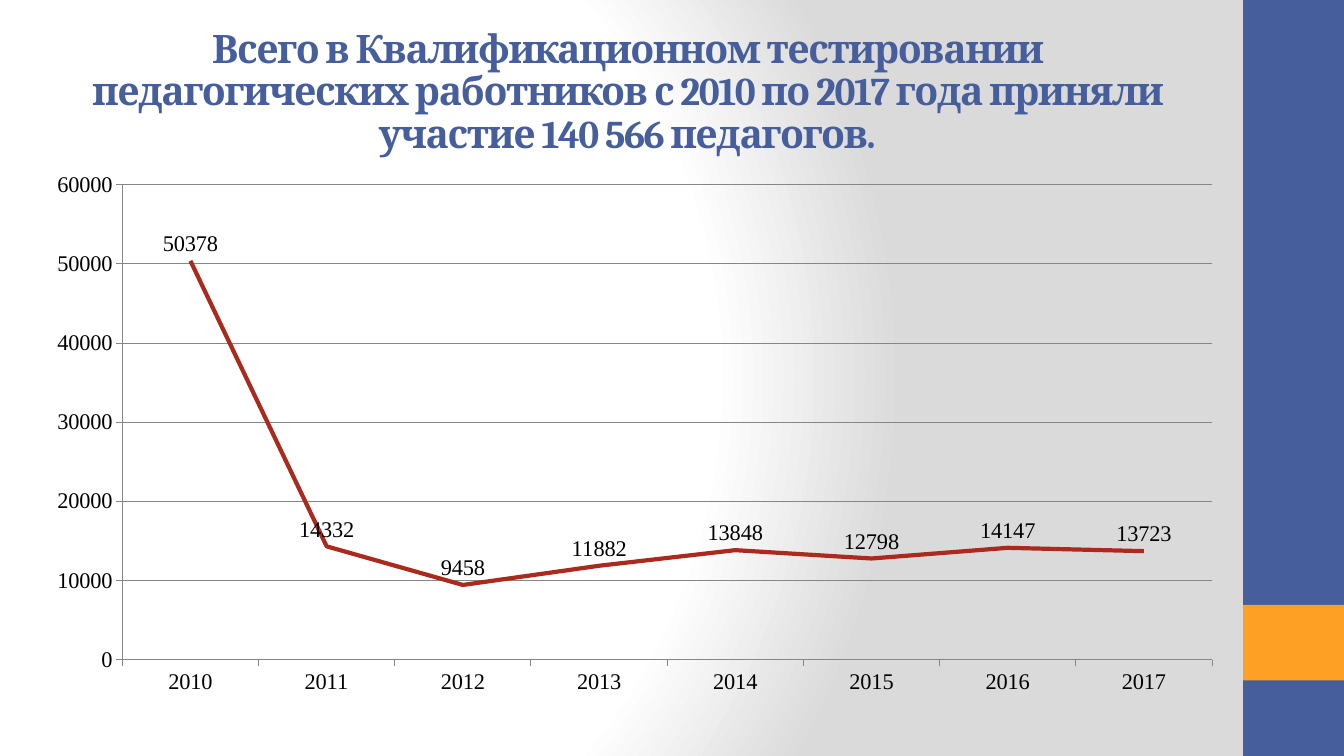
import lxml.etree
import pptx
import pptx.chart.data
import pptx.dml.color
import pptx.enum.chart
import pptx.enum.shapes
import pptx.enum.text
import pptx.oxml
import pptx.oxml.ns
import pptx.util

Cm, Pt, qn = pptx.util.Cm, pptx.util.Pt, pptx.oxml.ns.qn
BLUE, ORANGE, RED, GREY, BLACK = "465E9C", "FDA023", "AA2B1E", "868686", "000000"
WIDTH, HEIGHT, BAND = 33.87, 19.05, 2.54
TITLE = ("Всего в Квалификационном тестировании педагогических работников "
         "с 2010 по 2017 года приняли участие 140 566 педагогов.")
PARTICIPANTS = {"2010": 50378, "2011": 14332, "2012": 9458, "2013": 11882,
                "2014": 13848, "2015": 12798, "2016": 14147, "2017": 13723}


def rgb(value):
    """Turn a hex string into a colour."""
    return pptx.dml.color.RGBColor.from_string(value)


def set_background(s):
    """Fill the slide with a circular gradient from white to grey."""
    s.background.fill.gradient()
    old = s.element.find(".//" + qn("p:bgPr") + "/" + qn("a:gradFill"))
    stops = "".join(f'<a:gs pos="{pos * 1000}"><a:srgbClr val="{color}"/></a:gs>'
                    for pos, color in ((0, "FFFFFF"), (75, "FFFFFF"), (100, "DADADA")))
    new = pptx.oxml.parse_xml(
        f'<a:gradFill {pptx.oxml.ns.nsdecls("a")} rotWithShape="1"><a:gsLst>{stops}</a:gsLst>'
        '<a:path path="circle"><a:fillToRect l="20000" t="50000" r="100000" b="50000"/>'
        '</a:path></a:gradFill>')
    old.getparent().replace(old, new)


def add_side_band(s, x, y, w, h):
    """Draw the blue side band with its orange block."""
    for top, height, color in ((0, h, BLUE), (0.8 * h, 0.1 * h, ORANGE)):
        sp = s.shapes.add_shape(pptx.enum.shapes.MSO_SHAPE.RECTANGLE,
                                Cm(x), Cm(y + top), Cm(w), Cm(height))
        sp.shadow.inherit = False
        sp.fill.solid()
        sp.fill.fore_color.rgb = rgb(color)
        sp.line.fill.background()


def add_title(s, x, y, w, h):
    """Write the centred heading."""
    tf = s.shapes.add_textbox(Cm(x), Cm(y), Cm(w), Cm(h)).text_frame
    tf.word_wrap = True
    tf.vertical_anchor = pptx.enum.text.MSO_ANCHOR.MIDDLE
    tf.text = TITLE
    p = tf.paragraphs[0]
    p.alignment = pptx.enum.text.PP_ALIGN.CENTER
    p.line_spacing = 0.9
    r = p.runs[0]
    r.font.name, r.font.size, r.font.bold = "Cambria", Pt(28), True
    r.font.color.rgb = rgb(BLUE)
    r.font._element.set("spc", "-100")


def set_plot_area(chart, x, y, w, h):
    """Place the inner plot area as fractions of the chart."""
    plot_area = chart.element.find(".//" + qn("c:plotArea"))
    for old in plot_area.findall(qn("c:layout")):
        plot_area.remove(old)
    layout = lxml.etree.Element(qn("c:layout"))
    manual = lxml.etree.SubElement(layout, qn("c:manualLayout"))
    for tag, val in (("layoutTarget", "inner"), ("xMode", "edge"), ("yMode", "edge"),
                     ("x", x), ("y", y), ("w", w), ("h", h)):
        lxml.etree.SubElement(manual, qn("c:" + tag)).set("val", str(val))
    plot_area.insert(0, layout)


def add_participants_chart(s, x, y, w, h):
    """Plot the number of participants by year."""
    data = pptx.chart.data.CategoryChartData()
    data.categories = list(PARTICIPANTS)
    data.add_series("Series 1", list(PARTICIPANTS.values()))
    chart = s.shapes.add_chart(pptx.enum.chart.XL_CHART_TYPE.LINE_STACKED,
                               Cm(x), Cm(y), Cm(w), Cm(h), data).chart
    chart.has_title = chart.has_legend = False
    chart.font.name, chart.font.size = "Times New Roman", Pt(16)
    chart.font.color.rgb = rgb(BLACK)
    set_plot_area(chart, 0.07, 0.04, 0.91, 0.88)

    value_axis = chart.value_axis
    value_axis.minimum_scale, value_axis.maximum_scale = 0, 60000
    value_axis.major_unit = 10000
    value_axis.has_major_gridlines = True
    for line in (value_axis.format.line, chart.category_axis.format.line,
                 value_axis.major_gridlines.format.line):
        line.color.rgb = rgb(GREY)
        line.width = Pt(0.75)
    for axis in (value_axis, chart.category_axis):
        axis.major_tick_mark = pptx.enum.chart.XL_TICK_MARK.OUTSIDE

    plot = chart.plots[0]
    plot.vary_by_categories = False
    plot.has_data_labels = True
    plot.data_labels.show_value = True
    plot.data_labels.position = pptx.enum.chart.XL_LABEL_POSITION.ABOVE
    series = plot.series[0]
    series.smooth = False
    series.marker.style = pptx.enum.chart.XL_MARKER_STYLE.NONE
    series.format.line.color.rgb = rgb(RED)
    series.format.line.width = Pt(3)


def main():
    """Build and save the slide."""
    prs = pptx.Presentation()
    prs.slide_width, prs.slide_height = Cm(WIDTH), Cm(HEIGHT)
    s = prs.slides.add_slide(prs.slide_layouts[6])
    set_background(s)
    add_side_band(s, WIDTH - BAND, 0, BAND, HEIGHT)
    add_title(s, 1.7, 0.76, 28.22, 3.18)
    add_participants_chart(s, 0.97, 4.11, 30.18, 13.61)
    prs.save("out.pptx")


if __name__ == "__main__":
    main()
